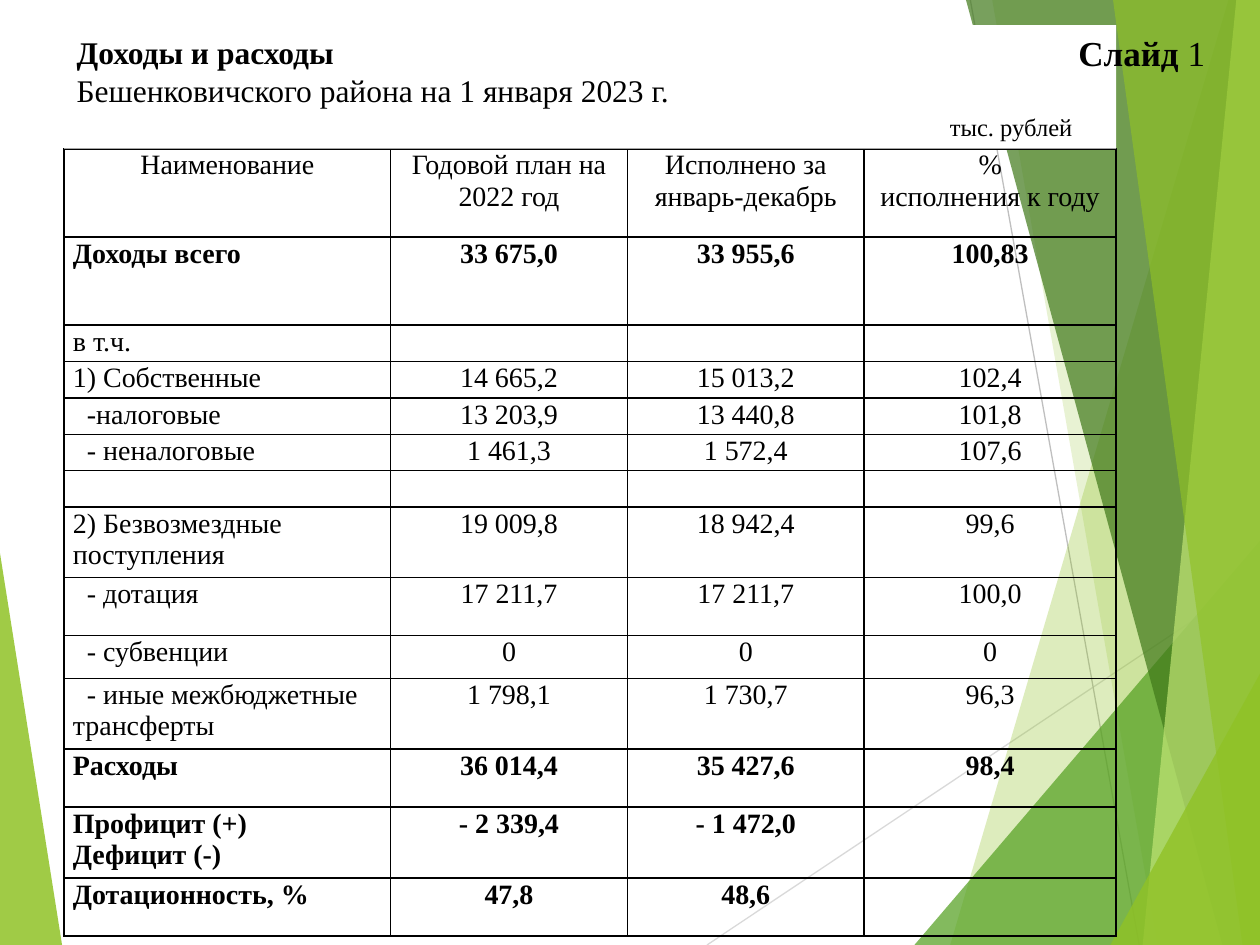
from dataclasses import dataclass
from typing import Optional

import pptx
import pptx.dml.color
import pptx.enum.shapes
import pptx.enum.text
import pptx.oxml
import pptx.oxml.ns
import pptx.util
from lxml import etree

Pt = pptx.util.Pt
qn = pptx.oxml.ns.qn
ALIGN = pptx.enum.text.PP_ALIGN
ANCHOR = pptx.enum.text.MSO_ANCHOR


@dataclass(frozen=True)
class Theme:
    font: str = "Times New Roman"
    ink: str = "000000"
    paper: str = "FFFFFF"
    lime: str = "90C226"
    green: str = "54A021"
    forest: str = "3F7819"
    pale: str = "C0E474"
    light_line: str = "D9D9D9"
    mid_line: str = "BFBFBF"
    number_size: float = 20
    title_size: float = 18
    table_size: float = 16
    unit_size: float = 14


THEME = Theme()
WIDTH, HEIGHT = 720, 540


@dataclass(frozen=True)
class Facet:
    color: str
    opacity: int
    points: tuple


@dataclass(frozen=True)
class Ray:
    color: str
    start: tuple
    end: tuple


@dataclass(frozen=True)
class Row:
    height: float
    cells: tuple = ("", "", "", "")
    bold: bool = False
    centered_label: bool = False
    indent: float = 0


@dataclass(frozen=True)
class Span:
    text: str
    size: float
    bold: bool = False


LEFT_FACET = Facet(THEME.lime, 85, ((0, 316), (35.5, HEIGHT), (0, HEIGHT)))
RAYS = (
    Ray(THEME.light_line, (404, HEIGHT), (WIDTH, 329)),
    Ray(THEME.mid_line, (554.5, 0), (651, HEIGHT)),
)
RIGHT_FACETS = tuple(
    Facet(color, opacity, (*edge, (WIDTH, HEIGHT), (WIDTH, edge_top)))
    for color, opacity, edge, edge_top in (
        (THEME.lime, 30, ((702, 0), (543, HEIGHT)), 0),
        (THEME.lime, 20, ((567, 0), (661.5, HEIGHT)), 0),
        (THEME.green, 72, ((522.5, HEIGHT),), 309),
        (THEME.forest, 70, ((552, 0), (698.5, HEIGHT)), 0),
        (THEME.pale, 70, ((706.5, 0), (653, HEIGHT)), 0),
        (THEME.lime, 65, ((636, 0), (710, HEIGHT)), 0),
        (THEME.lime, 80, ((634.5, HEIGHT),), 385),
    )
)

COLUMN_WIDTHS = (186.5, 135.3, 135.3, 144)
TALL, SINGLE, DOUBLE, MEDIUM, LOW = 50.4, 20.8, 40.4, 33.2, 24.4
NESTED = 8
ROWS = (
    Row(TALL, ("Наименование", "Годовой план на 2022 год", "Исполнено за январь-декабрь",
               "%\nисполнения к году"), centered_label=True),
    Row(TALL, ("Доходы всего", "33 675,0", "33 955,6", "100,83"), bold=True),
    Row(SINGLE, ("в т.ч.", "", "", "")),
    Row(SINGLE, ("1) Собственные", "14 665,2", "15 013,2", "102,4")),
    Row(SINGLE, ("-налоговые", "13 203,9", "13 440,8", "101,8"), indent=NESTED),
    Row(SINGLE, ("- неналоговые", "1 461,3", "1 572,4", "107,6"), indent=NESTED),
    Row(SINGLE),
    Row(DOUBLE, ("2) Безвозмездные поступления", "19 009,8", "18 942,4", "99,6")),
    Row(MEDIUM, ("- дотация", "17 211,7", "17 211,7", "100,0"), indent=NESTED),
    Row(LOW, ("- субвенции", "0", "0", "0"), indent=NESTED),
    Row(DOUBLE, ("- иные межбюджетные трансферты", "1 798,1", "1 730,7", "96,3"), indent=NESTED),
    Row(MEDIUM, ("Расходы", "36 014,4", "35 427,6", "98,4"), bold=True),
    Row(DOUBLE, ("Профицит (+)\nДефицит (-)", "- 2 339,4", "- 1 472,0", ""), bold=True),
    Row(MEDIUM, ("Дотационность, %", "47,8", "48,6", ""), bold=True),
)


def rgb(color: str) -> pptx.dml.color.RGBColor:
    return pptx.dml.color.RGBColor.from_string(color)


def set_format(target, values: dict) -> None:
    for name, value in values.items():
        setattr(target, name, value)


def draw_facet(page, facet: Facet) -> None:
    first, *rest = [(Pt(x), Pt(y)) for x, y in facet.points]
    builder = page.shapes.build_freeform(*first, scale=1.0)
    builder.add_line_segments(rest, close=True)
    shape = builder.convert_to_shape()
    shape.shadow.inherit = False
    shape.line.fill.background()
    shape.fill.solid()
    shape.fill.fore_color.rgb = rgb(facet.color)
    color_node = shape.fill._xPr.find(qn("a:solidFill"))[0]
    etree.SubElement(color_node, qn("a:alpha"), val=str(facet.opacity * 1000))


def draw_ray(page, ray: Ray) -> None:
    line = page.shapes.add_connector(
        pptx.enum.shapes.MSO_CONNECTOR.STRAIGHT, *map(Pt, ray.start + ray.end))
    line.line.color.rgb = rgb(ray.color)
    line.line.width = Pt(0.75)
    etree.SubElement(line._element.spPr, qn("a:effectLst"))


def add_span(para, span: Span) -> None:
    run = para.add_run()
    run.text = span.text
    set_format(run.font, {"name": THEME.font, "size": Pt(span.size), "bold": span.bold})
    run.font.color.rgb = rgb(THEME.ink)


def write_paragraphs(frame, lines: list, alignment=ALIGN.LEFT) -> None:
    """Write one paragraph for each list of spans."""
    for index, spans in enumerate(lines):
        para = frame.paragraphs[0] if index == 0 else frame.add_paragraph()
        para.alignment = alignment
        for span in spans:
            add_span(para, span)


def draw_heading(page) -> None:
    box = page.shapes.add_shape(
        pptx.enum.shapes.MSO_SHAPE.RECTANGLE, Pt(36.7), Pt(14.4), Pt(601.1), Pt(70.6))
    box.shadow.inherit = False
    box.line.fill.background()
    box.fill.solid()
    box.fill.fore_color.rgb = rgb(THEME.paper)
    frame = box.text_frame
    set_format(frame, {"word_wrap": True, "vertical_anchor": ANCHOR.MIDDLE})
    write_paragraphs(frame, [
        [Span("Доходы и расходы", THEME.title_size, True)],
        [Span("Бешенковичского района на 1 января 2023 г.", THEME.title_size)],
        [Span("тыс. рублей", THEME.unit_size)],
    ])
    unit = frame.paragraphs[-1]
    unit.space_before = Pt(2)
    set_indent(unit, left=499)


def set_indent(para, left: float = 0, first: float = 0) -> None:
    properties = para._p.get_or_add_pPr()
    properties.set("marL", str(Pt(left)))
    properties.set("indent", str(Pt(first)))


def draw_slide_number(page) -> None:
    box = page.shapes.add_textbox(Pt(609.1), Pt(14.4), Pt(96.5), Pt(31.7))
    box.text_frame.word_wrap = True
    write_paragraphs(box.text_frame, [
        [Span("Слайд", THEME.number_size, True), Span(" 1", THEME.number_size)]])


def add_borders(cell) -> None:
    properties = cell._tc.get_or_add_tcPr()
    for side in ("lnL", "lnR", "lnT", "lnB"):
        border = etree.SubElement(properties, qn(f"a:{side}"), w=str(Pt(1)))
        fill = etree.SubElement(border, qn("a:solidFill"))
        etree.SubElement(fill, qn("a:srgbClr"), val=THEME.ink)


def fill_cell(cell, text: str, row: Row, alignment, indent: Optional[float]) -> None:
    set_format(cell, {"margin_left": Pt(5), "margin_right": Pt(5),
                      "margin_top": Pt(0.7), "margin_bottom": Pt(0)})
    add_borders(cell)
    cell.fill.background()
    frame = cell.text_frame
    if not text:
        etree.SubElement(frame.paragraphs[0]._p, qn("a:endParaRPr"),
                         sz=str(int(THEME.table_size * 100)))
        return
    lines = [[Span(line, THEME.table_size, row.bold)] for line in text.split("\n")]
    write_paragraphs(frame, lines, alignment)
    if indent:
        set_indent(frame.paragraphs[0], first=indent)


def draw_budget_table(page) -> None:
    table = page.shapes.add_table(
        len(ROWS), len(COLUMN_WIDTHS), Pt(36.7), Pt(85), Pt(sum(COLUMN_WIDTHS)),
        Pt(sum(row.height for row in ROWS))).table
    set_format(table, {"first_row": False, "horz_banding": False})
    for column, width in zip(table.columns, COLUMN_WIDTHS):
        column.width = Pt(width)
    for row_index, row in enumerate(ROWS):
        table.rows[row_index].height = Pt(row.height)
        for column_index, text in enumerate(row.cells):
            is_label = column_index == 0
            left = is_label and not row.centered_label
            fill_cell(table.cell(row_index, column_index), text, row,
                      ALIGN.LEFT if left else ALIGN.CENTER, row.indent if is_label else None)


def main() -> None:
    deck = pptx.Presentation()
    set_format(deck, {"slide_width": Pt(WIDTH), "slide_height": Pt(HEIGHT)})
    page = deck.slides.add_slide(deck.slide_layouts[6])
    draw_facet(page, LEFT_FACET)
    for ray in RAYS:
        draw_ray(page, ray)
    for facet in RIGHT_FACETS:
        draw_facet(page, facet)
    draw_budget_table(page)
    draw_heading(page)
    draw_slide_number(page)
    deck.save("out.pptx")


if __name__ == "__main__":
    main()
